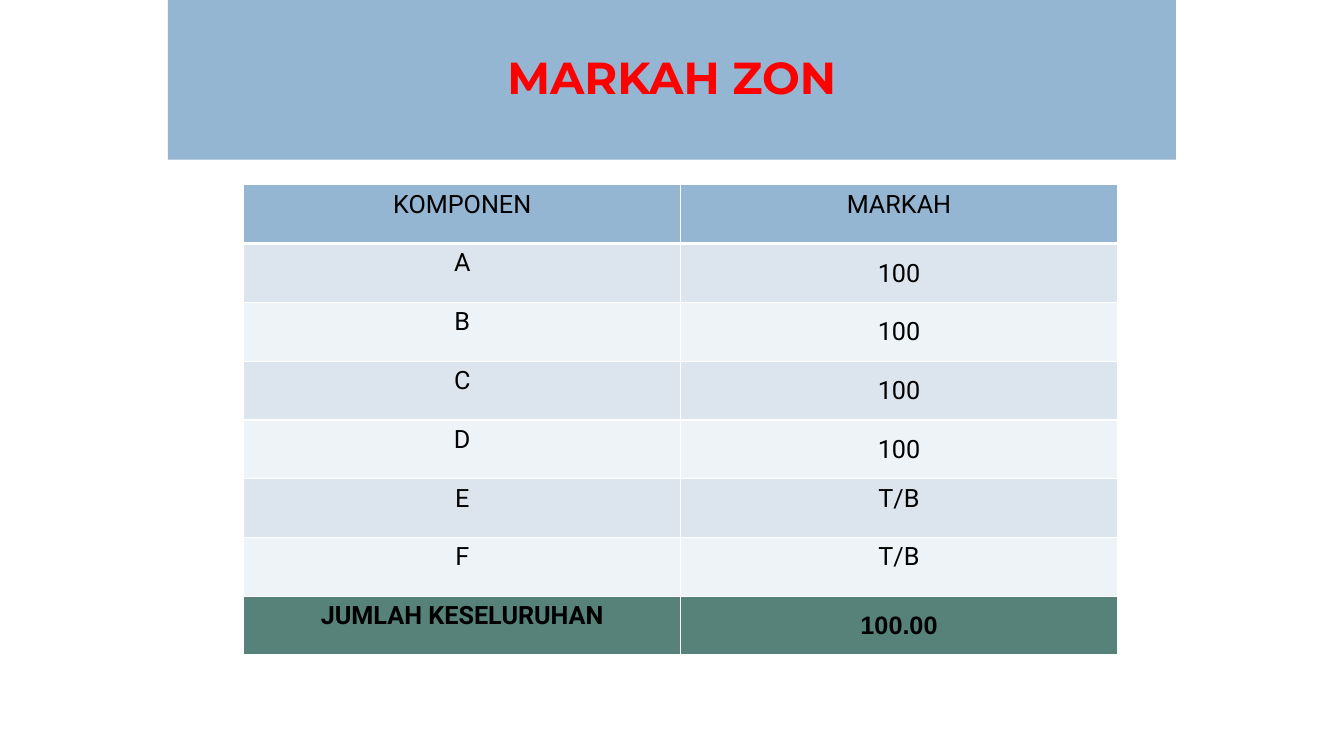
"""Build the zone marks slide: a title band above a table of components and marks."""
from lxml.etree import SubElement
from pptx import Presentation
from pptx.dml.color import RGBColor
from pptx.enum.shapes import MSO_SHAPE
from pptx.enum.text import MSO_ANCHOR as ANCHOR, PP_ALIGN as ALIGN
from pptx.oxml.ns import qn
from pptx.util import Pt

COLORS = {
    "band": "94B6D2",
    "odd": "DCE5EE",
    "even": "EEF3F7",
    "total": "578279",
    "title": "FF0000",
    "text": "000000",
    "border": "FFFFFF",
}
ROWS = [
    ("KOMPONEN", "MARKAH"),
    ("A", "100"),
    ("B", "100"),
    ("C", "100"),
    ("D", "100"),
    ("E", "T/B"),
    ("F", "T/B"),
    ("JUMLAH KESELURUHAN", "100.00"),
]
ROW_HEIGHT = 42
COLUMN_WIDTH = 312


def style_text(frame, font_name, size, color, bold):
    para = frame.paragraphs[0]
    para.alignment = ALIGN.CENTER
    for span in para.runs:
        span.font.name = font_name
        span.font.size = Pt(size)
        span.font.bold = bold
        span.font.color.rgb = RGBColor.from_string(COLORS[color])


def add_borders(cell, bottom_width):
    properties = cell._tc.get_or_add_tcPr()
    for side, width in (("L", 1), ("R", 1), ("T", 1), ("B", bottom_width)):
        line = SubElement(properties, qn(f"a:ln{side}"), w=str(Pt(width)))
        fill = SubElement(line, qn("a:solidFill"))
        SubElement(fill, qn("a:srgbClr"), val=COLORS["border"])


deck = Presentation()
deck.slide_width, deck.slide_height = Pt(960), Pt(540)
page = deck.slides.add_slide(deck.slide_layouts[6])

band = page.shapes.add_shape(MSO_SHAPE.RECTANGLE, Pt(120), Pt(0), Pt(720), Pt(114))
band.shadow.inherit = False
band.fill.solid()
band.fill.fore_color.rgb = RGBColor.from_string(COLORS["band"])
band.line.fill.background()
band.text_frame.text = "MARKAH ZON"
band.text_frame.vertical_anchor = ANCHOR.MIDDLE
band.text_frame.paragraphs[0].line_spacing = 0.9
style_text(band.text_frame, "Montserrat", 32, "title", True)

table = page.shapes.add_table(
    len(ROWS), 2, Pt(174.2), Pt(132), Pt(2 * COLUMN_WIDTH), Pt(len(ROWS) * ROW_HEIGHT)
).table
for column in table.columns:
    column.width = Pt(COLUMN_WIDTH)

for row_index, values in enumerate(ROWS):
    is_header = row_index == 0
    is_total = row_index == len(ROWS) - 1
    table.rows[row_index].height = Pt(ROW_HEIGHT)
    if is_header:
        row_color = "band"
    elif is_total:
        row_color = "total"
    else:
        row_color = "odd" if row_index % 2 else "even"

    for column_index, value in enumerate(values):
        cell = table.cell(row_index, column_index)
        is_number = value.startswith("100")
        cell.text_frame.text = value
        font_name = "Arial" if is_total and is_number else "Roboto"
        style_text(cell.text_frame, font_name, 18, "text", is_total)
        if is_number:
            cell.vertical_anchor = ANCHOR.MIDDLE
            cell.margin_left = cell.margin_right = cell.margin_top = Pt(0.72)
            cell.margin_bottom = Pt(0)
        add_borders(cell, 3 if is_header else 1)
        cell.fill.solid()
        cell.fill.fore_color.rgb = RGBColor.from_string(COLORS[row_color])

deck.save("out.pptx")
